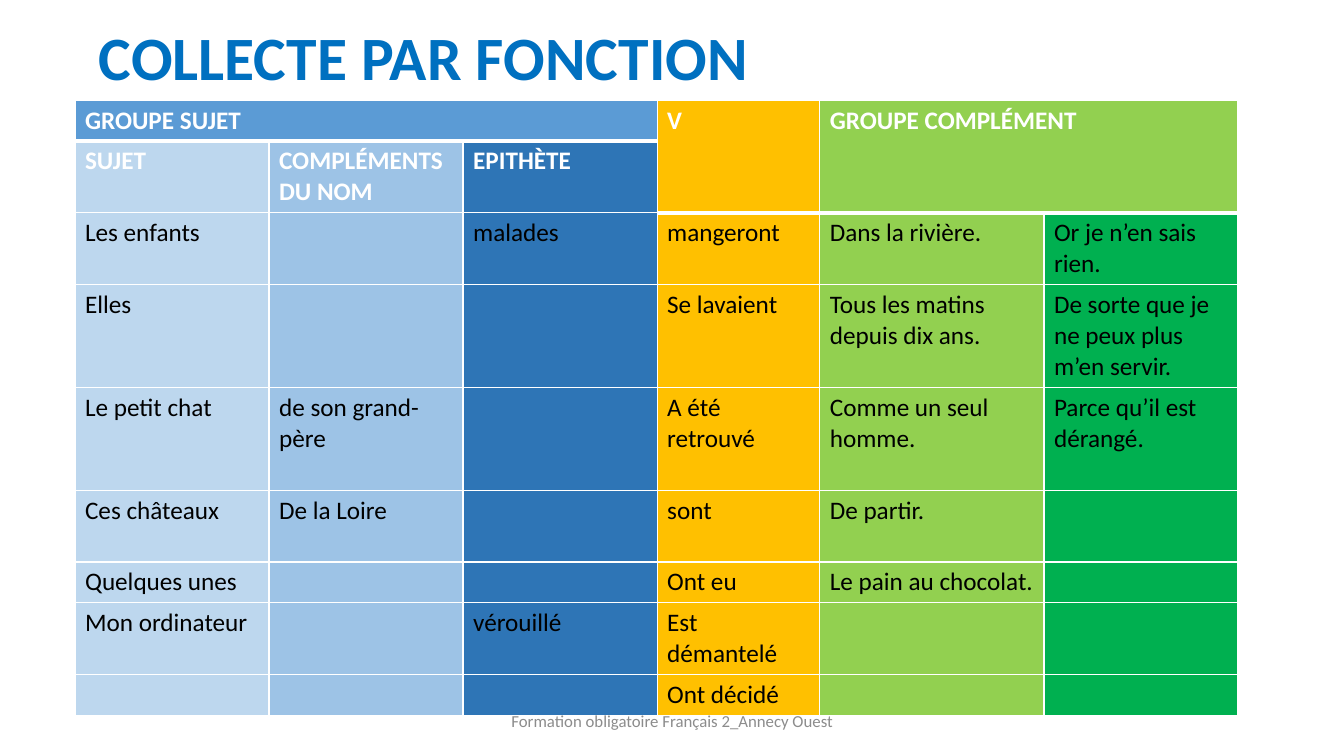
from lxml import etree
from pptx import Presentation
from pptx.dml.color import RGBColor
from pptx.enum import text
from pptx.oxml.ns import qn
from pptx.util import Cm, Pt


def style_font(font, size, color, bold=False):
    font.name = "Calibri"
    font.size = Pt(size)
    font.bold = bold
    font.color.rgb = RGBColor.from_string(color)


def add_border(cell, side, points):
    line = etree.SubElement(cell._tc.get_or_add_tcPr(), qn(f"a:ln{side}"), w=str(Pt(points)))
    fill = etree.SubElement(line, qn("a:solidFill"))
    etree.SubElement(fill, qn("a:srgbClr"), val="FFFFFF")


deck = Presentation()
deck.slide_width, deck.slide_height = Cm(33.87), Cm(19.05)
page = deck.slides.add_slide(deck.slide_layouts[5])

# Title
title = page.shapes.title
title.left, title.top, title.width, title.height = Cm(2.24), Cm(0.3), Cm(29.21), Cm(2.44)
title.text_frame.text = "COLLECTE PAR FONCTION"
title.text_frame.auto_size = text.MSO_AUTO_SIZE.NONE
title.text_frame.vertical_anchor = text.MSO_ANCHOR.MIDDLE
para = title.text_frame.paragraphs[0]
para.alignment = text.PP_ALIGN.LEFT
para.line_spacing = 0.9
style_font(para.runs[0].font, 44, "0070C0", True)

# Table content: two heading rows, then the collected sentences
HEADING_ROWS = 2
rows = [
    ["GROUPE SUJET", "", "", "V", "GROUPE COMPLÉMENT", ""],
    ["SUJET", "COMPLÉMENTS DU NOM", "EPITHÈTE", "", "", ""],
    ["Les enfants", "", "malades", "mangeront", "Dans la rivière.", "Or je n’en sais rien."],
    ["Elles", "", "", "Se lavaient", "Tous les matins depuis dix ans.",
     "De sorte que je ne peux plus m’en servir."],
    ["Le petit chat", "de son grand-père", "", "A été retrouvé", "Comme un seul homme.",
     "Parce qu’il est dérangé."],
    ["Ces châteaux", "De la Loire", "", "sont", "De partir.", ""],
    ["Quelques unes", "", "", "Ont eu", "Le pain au chocolat.", ""],
    ["Mon ordinateur", "", "vérouillé", "Est démantelé", "", ""],
    ["", "", "", "Ont décidé", "", ""],
]
column_fills = ["BDD7EE", "9DC3E6", "2E75B6", "FFC000", "92D050", "00B050"]
group_fills = ["5B9BD5"] * 3 + ["FFC000"] + ["92D050"] * 2
column_widths = [4.89, 4.89, 4.89, 4.1, 5.65, 4.89]
row_heights = [1.03, 1.81, 1.81, 2.59, 2.59, 1.81, 1.03, 1.81, 1.03]

frame = page.shapes.add_table(len(rows), len(column_fills), Cm(1.89), Cm(2.52),
                              Cm(sum(column_widths)), Cm(sum(row_heights)))
table = frame.table
table.horz_banding = False
for column, width in zip(table.columns, column_widths):
    column.width = Cm(width)
for row, height in zip(table.rows, row_heights):
    row.height = Cm(height)

# Cells, with a thick line under each heading
for r, words in enumerate(rows):
    for c, word in enumerate(words):
        cell = table.cell(r, c)
        above, below = [3 if i == 0 or (i == 1 and c >= 3) else 1 for i in (r - 1, r)]
        for side, points in (("L", 1), ("R", 1), ("T", above), ("B", below)):
            add_border(cell, side, points)
        grouped = r == 0 or (r < HEADING_ROWS and c >= 3)
        cell.fill.solid()
        cell.fill.fore_color.rgb = RGBColor.from_string((group_fills if grouped else column_fills)[c])
        heading = r < HEADING_ROWS
        para = cell.text_frame.paragraphs[0]
        para.text = word
        for span in para.runs:
            style_font(span.font, 18, "FFFFFF" if heading else "000000", heading)

# Merged headings
for first, last in (((0, 0), (0, 2)), ((0, 3), (1, 3)), ((0, 4), (1, 5))):
    table.cell(*first).merge(table.cell(*last))

# Footer
footer = page.shapes.add_textbox(Cm(11.23), Cm(17.65), Cm(11.43), Cm(1.02))
footer.text_frame.word_wrap = True
footer.text_frame.vertical_anchor = text.MSO_ANCHOR.MIDDLE
footer.text_frame.text = "Formation obligatoire Français 2_Annecy Ouest"
para = footer.text_frame.paragraphs[0]
para.alignment = text.PP_ALIGN.CENTER
style_font(para.runs[0].font, 12, "8C8C8C")

deck.save("out.pptx")
